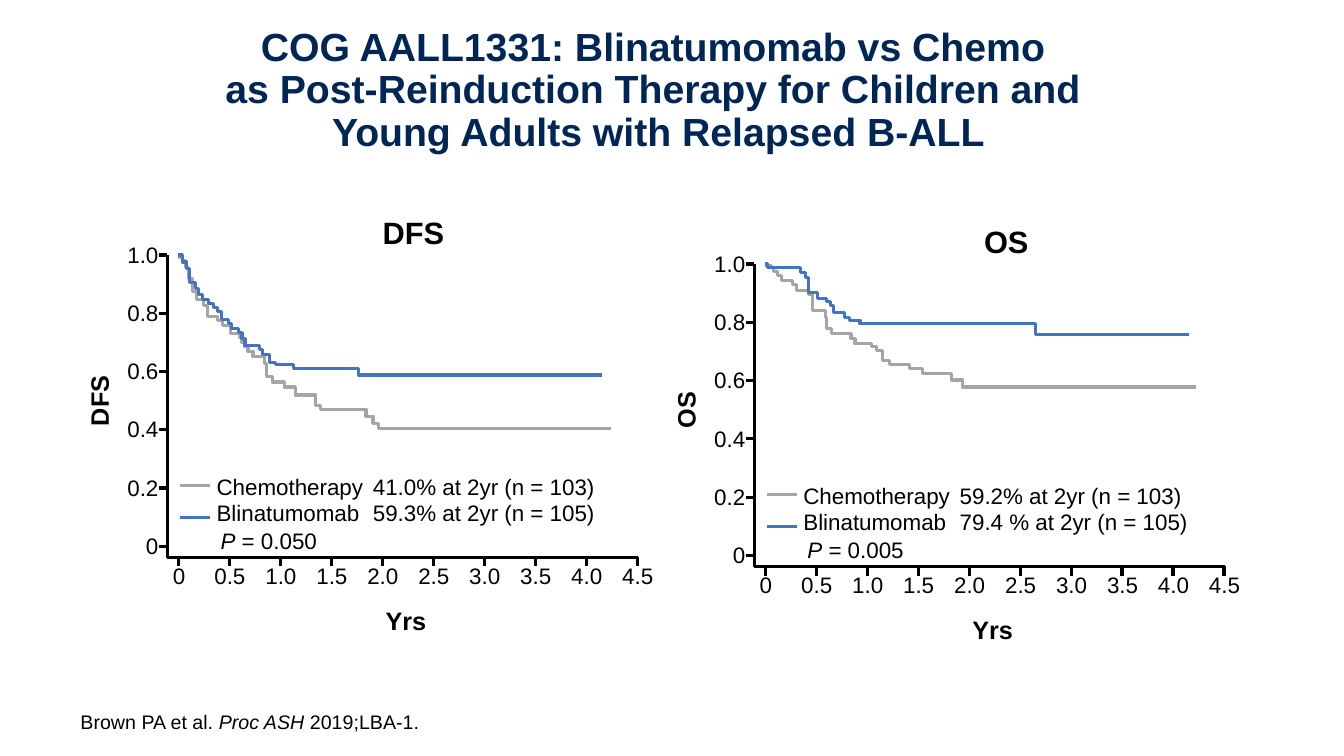
from dataclasses import dataclass

from pptx import Presentation
from pptx.dml.color import RGBColor
from pptx.enum.shapes import MSO_CONNECTOR
from pptx.enum.text import MSO_ANCHOR, PP_ALIGN
from pptx.oxml import parse_xml
from pptx.util import Cm, Pt

COLORS = {"navy": "002656", "black": "000000", "gray": "A5A5A5", "blue": "4472C4"}
EFFECTS = '<a:effectLst xmlns:a="http://schemas.openxmlformats.org/drawingml/2006/main"/>'


def length(inches):
    return Cm(inches * 2.54)


class SlideBuilder:
    """Places styled elements on one slide; positions are in inches."""

    font = "Arial"
    line_width = Pt(2.25)

    def __init__(self, slide):
        self.slide = slide

    def text(self, lines, left, top, width, height, size=16, bold=False, color="black",
             align=PP_ALIGN.LEFT, wrap=False, spacing=None, rotation=0):
        """Each line is a list of (words, italic) runs."""
        box = self.slide.shapes.add_textbox(*map(length, (left, top, width, height)))
        box.rotation = rotation
        frame = box.text_frame
        frame.word_wrap = wrap
        frame.vertical_anchor = MSO_ANCHOR.MIDDLE if wrap else MSO_ANCHOR.TOP
        paragraph = frame.paragraphs[0]
        paragraph.alignment = align
        paragraph.line_spacing = spacing
        for index, line in enumerate(lines):
            if index:
                paragraph.add_line_break()
            for words, italic in line:
                run = paragraph.add_run()
                run.text = words
                run.font.name = self.font
                run.font.size = Pt(size)
                run.font.bold = bold
                run.font.italic = italic
                run.font.color.rgb = RGBColor.from_string(COLORS[color])

    def label(self, words, left, top, width, height=0.37, **style):
        self.text([[(line, False)] for line in words.split("\n")],
                  left, top, width, height, **style)

    def style_line(self, shape, color):
        shape.line.color.rgb = RGBColor.from_string(COLORS[color])
        shape.line.width = self.line_width

    def line(self, x1, y1, x2, y2, color="black"):
        connector = self.slide.shapes.add_connector(
            MSO_CONNECTOR.STRAIGHT, *map(length, (x1, y1, x2, y2)))
        self.style_line(connector, color)
        connector._element.spPr.append(parse_xml(EFFECTS))

    def outline(self, points, color="black"):
        points = [(length(x), length(y)) for x, y in points]
        builder = self.slide.shapes.build_freeform(*points[0])
        builder.add_line_segments(points[1:], close=False)
        shape = builder.convert_to_shape()
        shape.shadow.inherit = False
        shape.fill.background()
        self.style_line(shape, color)

    def survival_curve(self, start, steps, end, color):
        """Each step runs level to x, then drops to y."""
        points = [start]
        for x, y in steps:
            points += [(x, points[-1][1]), (x, y)]
        self.outline(points + [(end, points[-1][1])], color)


@dataclass
class Panel:
    name: str
    left: float
    top: float
    title_center: float
    label_width: float
    rates: str
    rates_width: float
    p_value: str
    curves: list


PANELS = [
    Panel("DFS", 1.66, 2.53, 4.1, 0.71,
          "41.0% at 2yr (n = 103)\n59.3% at 2yr (n = 105)", 2.43, "0.050", [
              ("gray", (1.77, 2.55), [
                  (1.81, 2.59), (1.84, 2.65), (1.87, 2.76), (1.91, 2.89), (1.95, 2.97),
                  (2.02, 3.03), (2.06, 3.14), (2.16, 3.18), (2.21, 3.23), (2.29, 3.31),
                  (2.38, 3.35), (2.4, 3.4), (2.43, 3.44), (2.46, 3.49), (2.51, 3.54),
                  (2.62, 3.61), (2.64, 3.74), (2.7, 3.79), (2.82, 3.84), (2.93, 3.92),
                  (3.13, 4.02), (3.18, 4.06), (3.63, 4.13), (3.7, 4.2), (3.75, 4.25)], 6.06),
              ("blue", (1.77, 2.53), [
                  (1.81, 2.6), (1.85, 2.66), (1.88, 2.8), (1.94, 2.86), (1.97, 2.92),
                  (2.01, 2.97), (2.07, 3.01), (2.12, 3.05), (2.16, 3.09), (2.2, 3.17),
                  (2.27, 3.21), (2.3, 3.26), (2.37, 3.3), (2.4, 3.36), (2.43, 3.43),
                  (2.57, 3.47), (2.6, 3.52), (2.67, 3.6), (2.73, 3.62), (2.91, 3.66),
                  (3.56, 3.72)], 5.97)]),
    Panel("OS", 7.48, 2.62, 9.98, 0.57,
          "59.2% at 2yr (n = 103)\n79.4 % at 2yr (n = 105)", 2.5, "0.005", [
              ("gray", (7.59, 2.63), [
                  (7.65, 2.65), (7.67, 2.69), (7.71, 2.73), (7.75, 2.78), (7.86, 2.82),
                  (7.9, 2.88), (8.02, 2.92), (8.06, 3.08), (8.19, 3.15), (8.2, 3.26),
                  (8.25, 3.31), (8.44, 3.36), (8.48, 3.41), (8.64, 3.44), (8.69, 3.48),
                  (8.75, 3.58), (8.82, 3.62), (9.02, 3.66), (9.15, 3.71), (9.44, 3.77),
                  (9.55, 3.84)], 11.86),
              ("blue", (7.59, 2.62), [
                  (7.61, 2.65), (7.94, 2.7), (7.99, 2.75), (8.02, 2.9), (8.11, 2.96),
                  (8.2, 2.99), (8.24, 3.03), (8.27, 3.1), (8.38, 3.15), (8.43, 3.18),
                  (8.53, 3.21), (10.27, 3.32)], 11.79)]),
]


def draw_panel(builder, panel):
    left, top = panel.left, panel.top
    bottom = top + 3

    # Axes, ticks and tick labels
    builder.outline([(left, top), (left, bottom), (left + 4.67, bottom)])
    for index in range(6):
        y = top + index * 2.89 / 5
        builder.line(left - 0.08, y, left, y)
        value = f"{1 - index / 5:.1f}" if index < 5 else "0"
        builder.label(value, left - 0.5, y - 0.19, 0.51, align=PP_ALIGN.RIGHT)
    for index in range(10):
        x = left + 0.11 + index * 4.55 / 9
        builder.line(x, bottom, x, bottom + 0.09)
        value = f"{index / 2:.1f}" if index else "0"
        builder.label(value, x - 0.25, bottom, 0.51, align=PP_ALIGN.CENTER)

    # Axis names and panel title
    width = panel.label_width
    builder.label(panel.name, left - 0.68 - width / 2, top + 1.24, width, 0.4,
                  size=18, bold=True, rotation=270)
    builder.label("Yrs", left + 2.06, top + 3.43, 0.61, 0.4,
                  size=18, bold=True, align=PP_ALIGN.CENTER)
    builder.label(panel.name, panel.title_center - 0.41, top - 0.46, 0.82, 0.47,
                  size=22, bold=True, align=PP_ALIGN.CENTER)

    # Legend
    builder.label("Chemotherapy\nBlinatumomab", left + 0.39, top + 2.11, 1.67, 0.64)
    for color, y in (("gray", 2.29), ("blue", 2.6)):
        builder.line(left + 0.13, top + y, left + 0.42, top + y, color)
    builder.label(panel.rates, left + 1.94, top + 2.11, panel.rates_width, 0.64)
    builder.text([[("P", True), (f" = {panel.p_value}", False)]],
                 left + 0.43, top + 2.65, 1.17, 0.37)

    # Curves
    for color, start, steps, end in panel.curves:
        builder.survival_curve(start, steps, end, color)


def main():
    presentation = Presentation()
    presentation.slide_width = length(13.33)
    presentation.slide_height = length(7.5)
    builder = SlideBuilder(presentation.slides.add_slide(presentation.slide_layouts[6]))

    # Title and citation
    builder.label("COG AALL1331: Blinatumomab vs Chemo \n"
                  "as Post-Reinduction Therapy for Children and \n"
                  "Young Adults with Relapsed B-ALL",
                  0.78, 0.28, 11.5, 1.25, size=28, bold=True, color="navy",
                  align=PP_ALIGN.CENTER, wrap=True, spacing=0.9)
    builder.text([[("Brown PA et al. ", False), ("Proc ASH ", True),
                   ("2019;LBA-1.", False)]], 0.7, 6.99, 3.63, 0.34, size=14)

    for panel in PANELS:
        draw_panel(builder, panel)
    presentation.save("out.pptx")


if __name__ == "__main__":
    main()
